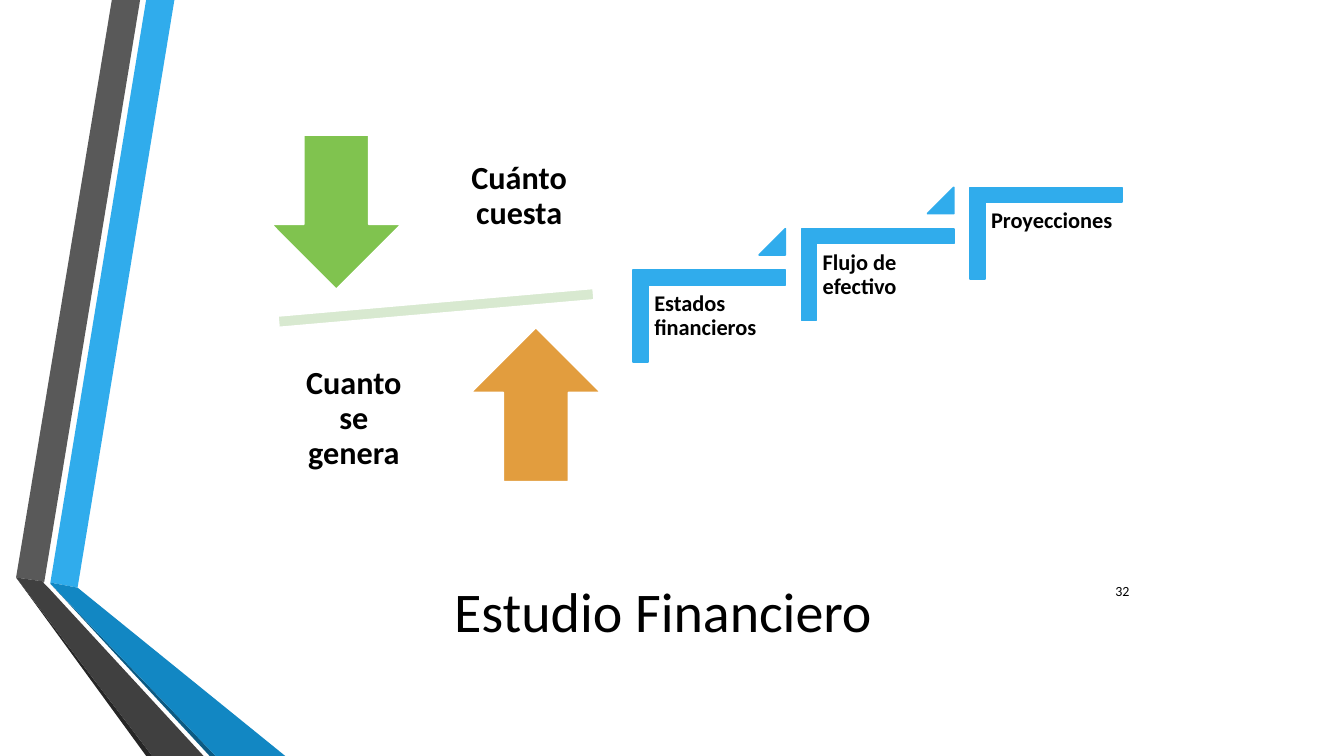
from pptx import Presentation
from pptx import util as u
from pptx.dml.color import RGBColor
from pptx.enum import shapes, text

BLUE, WHITE, BLACK = "30ACEC", "FFFFFF", "000000"

# Ribbon pieces on the left edge, back to front: colour and corner points
RIBBONS = [
    (BLUE, [(0.5, 5.78), (0.77, 5.83), (1.73, 0), (1.45, 0)]),
    ("595959", [(1.39, 0), (1.11, 0), (0.16, 5.73), (0.44, 5.77)]),
    ("262626", [(0.16, 5.73), (1.45, 7.5), (1.51, 7.5)]),
    ("0C5A82", [(0.5, 5.79), (2.08, 7.5), (2.14, 7.5)]),
    ("1287C3", [(0.5, 5.79), (2.14, 7.5), (2.83, 7.5), (0.77, 5.83), (0.5, 5.78)]),
    ("404040", [(2.02, 7.5), (0.48, 5.83), (0.43, 5.78), (0.44, 5.77),
                (0.16, 5.73), (1.51, 7.5)]),
]
STEPS = ["Estados financieros", "Flujo de efectivo", "Proyecciones"]
STEP_DX, STEP_DY = 1.67, -0.41


def color(value):
    return RGBColor.from_string(value)


def add_ribbon(s, fill, points):
    start, *rest = [(u.Inches(x), u.Inches(y)) for x, y in points]
    builder = s.shapes.build_freeform(*start)
    builder.add_line_segments(rest, close=True)
    sp = builder.convert_to_shape()
    sp.shadow.inherit = False
    sp.fill.solid()
    sp.fill.fore_color.rgb = color(fill)
    sp.line.fill.background()


def add_preset(s, kind, box, fill, line=WHITE, rotation=0, adjustments=()):
    sp = s.shapes.add_shape(kind, *map(u.Inches, box))
    sp.shadow.inherit = False
    sp.rotation = rotation
    for i, value in enumerate(adjustments):
        sp.adjustments[i] = value
    sp.fill.solid()
    sp.fill.fore_color.rgb = color(fill)
    sp.line.color.rgb = color(line)
    sp.line.width = u.Pt(1.25)


def add_text(s, words, box, size, align=text.PP_ALIGN.CENTER,
             anchor=text.MSO_ANCHOR.MIDDLE, bold=False, inset=None, spacing=None):
    tf = s.shapes.add_textbox(*map(u.Inches, box)).text_frame
    tf.word_wrap = True
    tf.vertical_anchor = anchor
    if inset is not None:
        tf.margin_left = tf.margin_right = u.Inches(inset)
        tf.margin_top = tf.margin_bottom = u.Inches(inset)
    p = tf.paragraphs[0]
    p.alignment = align
    if spacing is not None:
        p.line_spacing = spacing
    r = p.add_run()
    r.text = words
    r.font.name = "Calibri"
    r.font.size = u.Pt(size)
    r.font.bold = bold
    r.font.color.rgb = color(BLACK)


def add_balance(s):
    """Cost and income arrows on either side of a tilted bar."""
    kinds = shapes.MSO_SHAPE
    add_preset(s, kinds.MATH_MINUS, (2.19, 2.81, 4.27, 0.49), "D8E9D0", rotation=355)
    add_preset(s, kinds.DOWN_ARROW, (2.69, 1.34, 1.29, 1.53), "80C34F")
    add_preset(s, kinds.UP_ARROW, (4.67, 3.25, 1.29, 1.53), "E29D3E")
    for words, x, y in [("Cuánto cuesta", 4.46, 1.15), ("Cuanto se genera", 2.82, 3.36)]:
        add_text(s, words, (x, y, 1.38, 1.6), 23, bold=True, inset=0.18, spacing=0.9)


def add_staircase(s):
    for i, words in enumerate(STEPS):
        dx, dy = i * STEP_DX, i * STEP_DY
        add_preset(s, shapes.MSO_SHAPE.CORNER, (6.58 + dx, 2.38 + dy, 0.91, 1.51),
                   BLUE, BLUE, 90, (0.161, 0.161))
        add_text(s, words, (6.42 + dx, 2.83 + dy, 1.36, 1.19), 16, text.PP_ALIGN.LEFT,
                 text.MSO_ANCHOR.TOP, bold=True, inset=0.07, spacing=0.9)
        if i < len(STEPS) - 1:
            add_preset(s, shapes.MSO_SHAPE.ISOSCELES_TRIANGLE,
                       (7.53 + dx, 2.27 + dy, 0.26, 0.26), BLUE, BLUE, adjustments=(1,))


def main():
    prs = Presentation()
    prs.slide_width, prs.slide_height = u.Inches(13.33), u.Inches(7.5)
    s = prs.slides.add_slide(prs.slide_layouts[6])
    for fill, points in RIBBONS:
        add_ribbon(s, fill, points)
    add_text(s, "Estudio Financiero", (2.1, 5.48, 8.95, 1.15), 40)
    add_balance(s)
    add_staircase(s)
    add_text(s, "32", (10.8, 5.66, 0.5, 0.4), 10, text.PP_ALIGN.RIGHT)
    prs.save("out.pptx")


if __name__ == "__main__":
    main()
